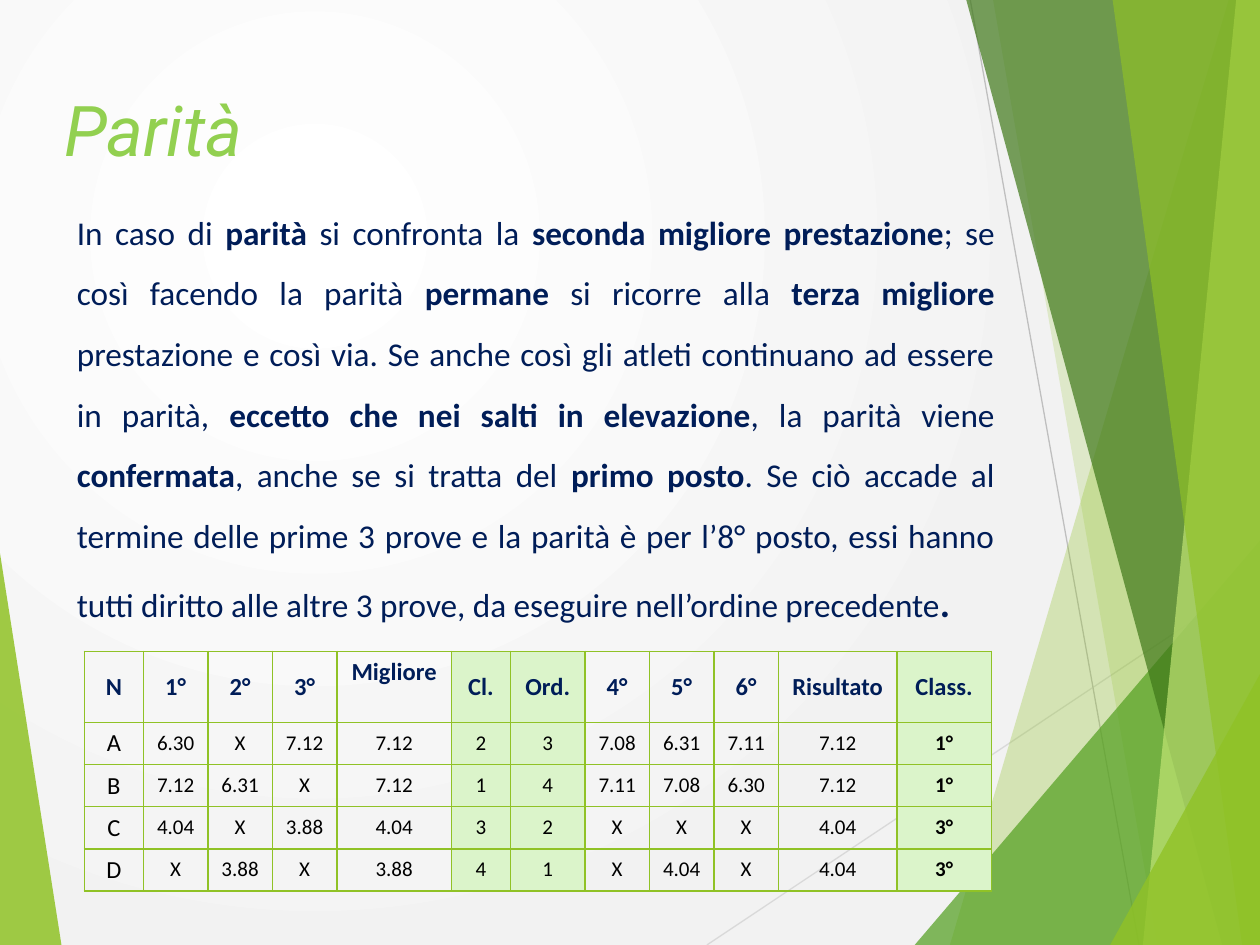
import lxml.etree
import pptx
import pptx.dml.color
import pptx.enum.shapes
import pptx.enum.text
import pptx.oxml.ns
import pptx.util

Cm = pptx.util.Cm
Pt = pptx.util.Pt
RGBColor = pptx.dml.color.RGBColor
qn = pptx.oxml.ns.qn

WHITE = RGBColor(0xFF, 0xFF, 0xFF)
PALE_GREY = RGBColor(0xF2, 0xF2, 0xF2)
LIGHT_GREY = RGBColor(0xD9, 0xD9, 0xD9)
GREY = RGBColor(0xBF, 0xBF, 0xBF)
LIME = RGBColor(0x90, 0xC2, 0x26)
GREEN = RGBColor(0x54, 0xA0, 0x21)
DARK_GREEN = RGBColor(0x3F, 0x78, 0x19)
PALE_LIME = RGBColor(0xC0, 0xE4, 0x74)
TITLE_GREEN = RGBColor(0x92, 0xD0, 0x50)
CELL_GREEN = RGBColor(0xDB, 0xF4, 0xCA)
NAVY = RGBColor(0x00, 0x1D, 0x58)
BLACK = RGBColor(0, 0, 0)

BODY_RUNS = [
    ("In caso di ", False),
    ("parità", True),
    (" si confronta la ", False),
    ("seconda migliore prestazione", True),
    ("; se così facendo la parità ", False),
    ("permane", True),
    (" si ricorre alla ", False),
    ("terza migliore ", True),
    ("prestazione e così via. Se anche così gli atleti continuano ad essere in parità, ", False),
    ("eccetto che nei salti in elevazione", True),
    (", la parità viene ", False),
    ("confermata", True),
    (", anche se si tratta del ", False),
    ("primo posto", True),
    (". Se ciò accade al termine delle prime 3 prove e la parità è per l’8° posto, "
     "essi hanno tutti diritto alle altre 3 prove, da eseguire nell’ordine precedente", False),
    (".", True),
]

RESULTS = [
    ["N", "1°", "2°", "3°", "Migliore", "Cl.", "Ord.", "4°", "5°", "6°", "Risultato", "Class."],
    ["A", "6.30", "X", "7.12", "7.12", "2", "3", "7.08", "6.31", "7.11", "7.12", "1°"],
    ["B", "7.12", "6.31", "X", "7.12", "1", "4", "7.11", "7.08", "6.30", "7.12", "1°"],
    ["C", "4.04", "X", "3.88", "4.04", "3", "2", "X", "X", "X", "4.04", "3°"],
    ["D", "X", "3.88", "X", "3.88", "4", "1", "X", "4.04", "X", "4.04", "3°"],
]
COLUMN_WIDTHS = [1.19, 1.3, 1.3, 1.3, 2.31, 1.19, 1.5, 1.3, 1.3, 1.3, 2.39, 1.9]
RANKING_HEADERS = {"Cl.", "Ord.", "Class."}


def set_background(slide):
    """Fill the background with a circular gradient."""
    fill = slide.background.fill
    fill.gradient()
    for stop, color in zip(fill.gradient_stops, (WHITE, PALE_GREY)):
        stop.color.rgb = color
    gradient = slide.background._cSld.find(".//" + qn("a:gradFill"))
    gradient.remove(gradient.find(qn("a:lin")))
    circle = lxml.etree.SubElement(gradient, qn("a:path"), path="circle")
    lxml.etree.SubElement(circle, qn("a:fillToRect"),
                          l="50000", t="50000", r="100000", b="100000")


def add_facet(slide, left, top, points, color, opacity):
    """Draw a translucent polygon from points in cm relative to left and top."""
    corners = [(Cm(left + x), Cm(top + y)) for x, y in points]
    builder = slide.shapes.build_freeform(*corners[0])
    builder.add_line_segments(corners[1:], close=True)
    shape = builder.convert_to_shape()
    shape.shadow.inherit = False
    shape.line.fill.background()
    shape.fill.solid()
    shape.fill.fore_color.rgb = color
    color_element = shape.element.spPr.find(qn("a:solidFill"))[0]
    lxml.etree.SubElement(color_element, qn("a:alpha"), val=str(opacity * 1000))


def add_thin_line(slide, left, top, start, end, color):
    """Draw a thin straight line between two points in cm."""
    connector = slide.shapes.add_connector(
        pptx.enum.shapes.MSO_CONNECTOR.STRAIGHT,
        Cm(left + start[0]), Cm(top + start[1]), Cm(left + end[0]), Cm(top + end[1]))
    connector.line.color.rgb = color
    connector.line.width = Pt(0.75)
    lxml.etree.SubElement(connector._element.spPr, qn("a:effectLst"))


def add_left_wedge(slide, left, top, width, height):
    """Draw the green wedge at the lower left edge."""
    add_facet(slide, left, top, [(0, 0), (width, height), (0, height)], LIME, 85)


def add_right_facets(slide, left, top, width, height):
    """Draw the lines and overlapping facets that end at the right edge."""
    add_thin_line(slide, left, top, (0, height), (width, 11.61), LIGHT_GREY)
    add_thin_line(slide, left, top, (5.31, 0), (8.71, height), GREY)
    facets = [
        (10.52, 0, 4.9, LIME, 30),
        (5.77, 0, 9.09, LIME, 20),
        (width, 10.9, 4.19, GREEN, 72),
        (5.23, 0, 10.39, DARK_GREEN, 70),
        (10.67, 0, 8.79, PALE_LIME, 70),
        (8.18, 0, 10.79, LIME, 65),
        (width, 13.59, 8.13, LIME, 80),
    ]
    for apex_x, apex_y, foot_x, color, opacity in facets:
        points = [(apex_x, apex_y), (foot_x, height), (width, height), (width, apex_y)]
        add_facet(slide, left, top, points, color, opacity)


def add_title(slide, left, top, width, height):
    """Place the slide title."""
    box = slide.shapes.add_textbox(Cm(left), Cm(top), Cm(width), Cm(height))
    frame = box.text_frame
    frame.word_wrap = True
    frame.margin_left = Cm(1.3)
    frame.margin_top = Cm(0.25)
    paragraph = frame.paragraphs[0]
    paragraph.text = "Parità"
    paragraph.line_spacing = 1.5
    paragraph.font.name = "Roboto"
    paragraph.font.size = Pt(40)
    paragraph.font.italic = True
    paragraph.font.color.rgb = TITLE_GREEN


def add_body(slide, left, top, width, height):
    """Place the justified rule text with its bold key words."""
    box = slide.shapes.add_textbox(Cm(left), Cm(top), Cm(width), Cm(height))
    box.text_frame.word_wrap = True
    paragraph = box.text_frame.paragraphs[0]
    paragraph.alignment = pptx.enum.text.PP_ALIGN.JUSTIFY
    paragraph.line_spacing = 1.52
    paragraph.font.name = "Calibri"
    paragraph.font.size = Pt(19)
    paragraph.font.color.rgb = NAVY
    for text, bold in BODY_RUNS:
        run = paragraph.add_run()
        run.text = text
        run.font.bold = bold
    run.font.size = Pt(22)


def add_cell_borders(cell):
    """Give a cell lime borders on all four sides."""
    properties = cell._tc.get_or_add_tcPr()
    for side in ("a:lnL", "a:lnR", "a:lnT", "a:lnB"):
        line = lxml.etree.SubElement(properties, qn(side), w=str(Pt(1)))
        fill = lxml.etree.SubElement(line, qn("a:solidFill"))
        lxml.etree.SubElement(fill, qn("a:srgbClr"), val=str(LIME))


def add_results_table(slide, left, top, width, header_height, row_height):
    """Place the table of attempts and rankings."""
    headers = RESULTS[0]
    height = header_height + row_height * (len(RESULTS) - 1)
    table = slide.shapes.add_table(len(RESULTS), len(headers), Cm(left), Cm(top),
                                   Cm(width), Cm(height)).table
    table.first_row = False
    table.horz_banding = False
    for column, share in zip(table.columns, COLUMN_WIDTHS):
        column.width = Cm(width * share / sum(COLUMN_WIDTHS))
    for row_index, values in enumerate(RESULTS):
        is_header = row_index == 0
        table.rows[row_index].height = Cm(header_height if is_header else row_height)
        for column_index, (header, value) in enumerate(zip(headers, values)):
            cell = table.cell(row_index, column_index)
            add_cell_borders(cell)
            if header in RANKING_HEADERS:
                cell.fill.solid()
                cell.fill.fore_color.rgb = CELL_GREEN
            else:
                cell.fill.background()
            anchor = pptx.enum.text.MSO_ANCHOR
            cell.vertical_anchor = anchor.TOP if value == "Migliore" else anchor.MIDDLE
            paragraph = cell.text_frame.paragraphs[0]
            paragraph.text = value
            paragraph.alignment = pptx.enum.text.PP_ALIGN.CENTER
            paragraph.font.name = "Calibri"
            paragraph.font.size = Pt(14 if is_header or column_index == 0 else 12)
            paragraph.font.bold = is_header or header == "Class."
            paragraph.font.color.rgb = NAVY if is_header else BLACK


def main():
    """Build and save the slide."""
    presentation = pptx.Presentation()
    presentation.slide_width = Cm(25.4)
    presentation.slide_height = Cm(19.05)
    slide = presentation.slides.add_slide(presentation.slide_layouts[6])
    set_background(slide)
    add_left_wedge(slide, 0, 11.15, 1.24, 7.9)
    add_right_facets(slide, 14.25, 0, 11.15, 19.05)
    add_title(slide, 0, 0.64, 20, 2.5)
    add_body(slide, 1.3, 3.73, 19, 9.8)
    add_results_table(slide, 1.7, 13.13, 18.29, 1.43, 0.85)
    presentation.save("out.pptx")


if __name__ == "__main__":
    main()
